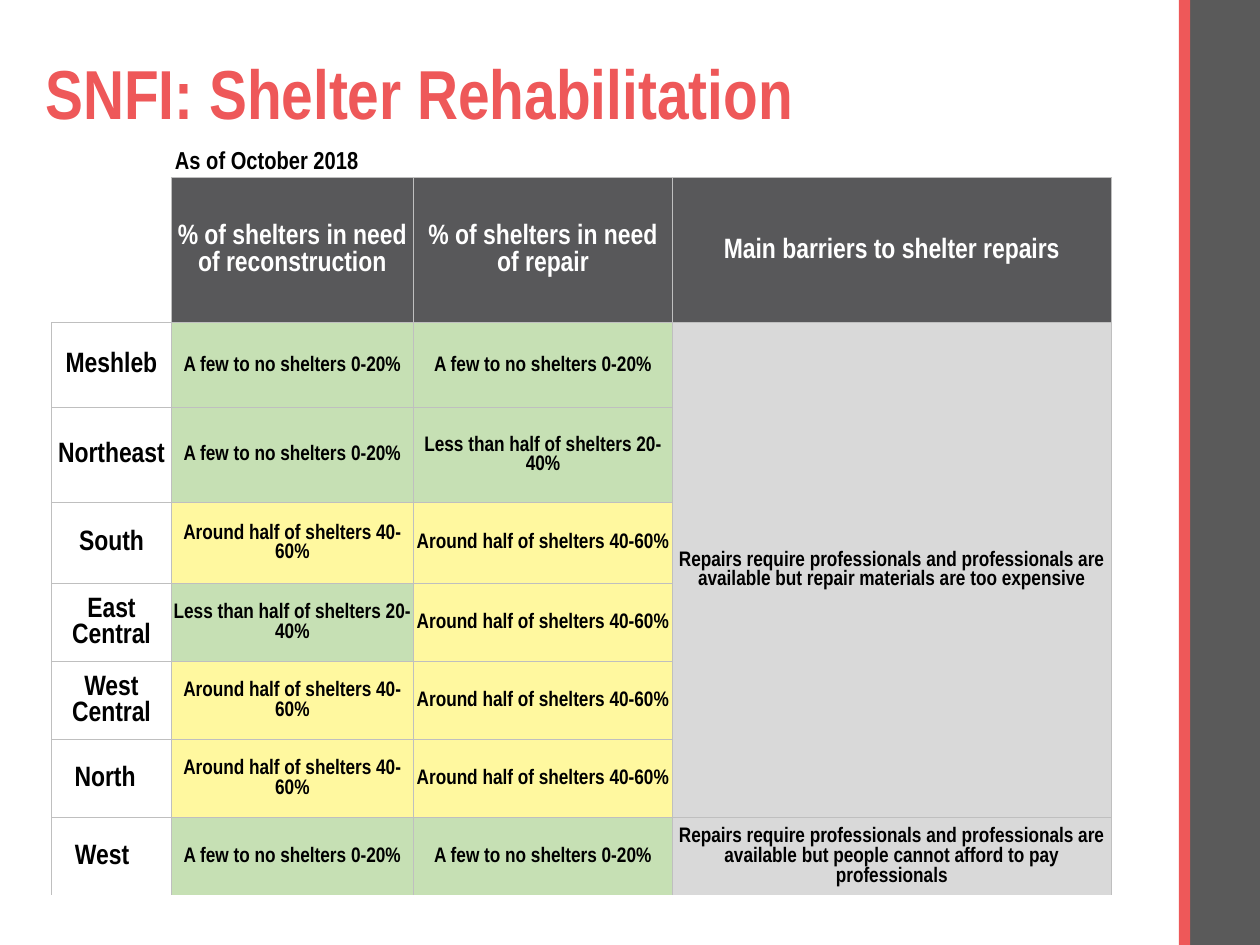
"""Build the shelter rehabilitation slide with its table of needs by area."""
from lxml import etree
from pptx import Presentation
from pptx import util as u
from pptx.dml.color import RGBColor
from pptx.enum import shapes, text
from pptx.oxml import ns

FONT = "Arial Narrow"
COLORS = {
    "accent": "EE5859", "band": "5A5A5A", "header": "58585A", "border": "BFBFBF",
    "low": "C6E0B4", "half": "FFF89F", "barrier": "D9D9D9",
    "black": "000000", "white": "FFFFFF",
}
FEW = ("A few to no shelters 0-20%", "low")
LESS = ("Less than half of shelters 20-40%", "low")
HALF = ("Around half of shelters 40-60%", "half")
HEADERS = ["% of shelters in need of reconstruction",
           "% of shelters in need of repair",
           "Main barriers to shelter repairs"]
AREAS = [
    ("Meshleb", FEW, FEW),
    ("Northeast", FEW, LESS),
    ("South", HALF, HALF),
    ("East Central", LESS, HALF),
    ("West Central", HALF, HALF),
    ("North", HALF, HALF),
    ("West", FEW, FEW),
]
LABEL_INSETS = {"North": 8, "West": 11.5}
BARRIERS = {
    1: "Repairs require professionals and professionals are available "
       "but repair materials are too expensive",
    7: "Repairs require professionals and professionals are available "
       "but people cannot afford to pay professionals",
}
COLUMN_WIDTHS = [68.4, 138.3, 148.2, 250.5]
ROW_HEIGHTS = [82.7, 48.6, 54.2, 46.3] + [44.6] * 4


def color(name):
    return RGBColor.from_string(COLORS[name])


def set_font(paragraph, size, name):
    paragraph.font.name = FONT
    paragraph.font.size = u.Pt(size)
    paragraph.font.bold = True
    paragraph.font.color.rgb = color(name)


def place(shape, left, top, width, height):
    shape.left, shape.top = u.Pt(left), u.Pt(top)
    shape.width, shape.height = u.Pt(width), u.Pt(height)


def add_band(slide, left, width, fill):
    shape = slide.shapes.add_shape(shapes.MSO_SHAPE.RECTANGLE, u.Pt(left), 0, u.Pt(width), u.Pt(540))
    shape.shadow.inherit = False
    shape.fill.solid()
    shape.fill.fore_color.rgb = color(fill)
    shape.line.fill.background()


def set_title(slide, wording):
    title = slide.shapes.title
    place(title, 18.7, 28.8, 625.7, 53.3)
    frame = title.text_frame
    frame.text = wording
    frame.vertical_anchor = text.MSO_ANCHOR.MIDDLE
    frame.auto_size = text.MSO_AUTO_SIZE.NONE
    paragraph = frame.paragraphs[0]
    paragraph.alignment = text.PP_ALIGN.LEFT
    paragraph.line_spacing = 0.9
    set_font(paragraph, 39.6, "accent")


def add_date(slide, wording):
    box = slide.shapes.add_textbox(u.Pt(92.9), u.Pt(79.2), u.Pt(643.7), u.Pt(24.5))
    box.text_frame.word_wrap = True
    box.text_frame.text = wording
    set_font(box.text_frame.paragraphs[0], 14, "black")


def set_borders(cell, sides):
    properties = cell._tc.get_or_add_tcPr()
    for side in "LRTB":
        line = etree.SubElement(properties, ns.qn(f"a:ln{side}"), w=str(u.Pt(0.5)))
        if side in sides:
            fill = etree.SubElement(line, ns.qn("a:solidFill"))
            etree.SubElement(fill, ns.qn("a:srgbClr"), val=COLORS["border"])
        else:
            etree.SubElement(line, ns.qn("a:noFill"))


def fill_cell(cell, wording, size, font_color, fill=None, right_inset=0.7):
    cell.margin_left = cell.margin_top = u.Pt(0.7)
    cell.margin_right, cell.margin_bottom = u.Pt(right_inset), 0
    cell.vertical_anchor = text.MSO_ANCHOR.MIDDLE
    cell.text = wording
    paragraph = cell.text_frame.paragraphs[0]
    paragraph.alignment = text.PP_ALIGN.CENTER
    set_font(paragraph, size, font_color)
    if fill:
        cell.fill.solid()
        cell.fill.fore_color.rgb = color(fill)


def create_table(slide):
    frame = slide.shapes.add_table(len(ROW_HEIGHTS), len(COLUMN_WIDTHS), u.Pt(29.5), u.Pt(101.6),
                                   u.Pt(sum(COLUMN_WIDTHS)), u.Pt(sum(ROW_HEIGHTS)))
    table = frame.table
    table.first_row = table.horz_banding = False
    for column, width in zip(table.columns, COLUMN_WIDTHS):
        column.width = u.Pt(width)
    last = len(ROW_HEIGHTS) - 1
    for index, (row, height) in enumerate(zip(table.rows, ROW_HEIGHTS)):
        row.height = u.Pt(height)
        for position, cell in enumerate(row.cells):
            sides = "RB" if index == position == 0 else "LRT" if index == last else "LRTB"
            set_borders(cell, sides)
            cell.fill.background()
    return table


def add_shelter_table(slide):
    table = create_table(slide)
    for column, header in enumerate(HEADERS, 1):
        fill_cell(table.cell(0, column), header, 16, "white", "header")
    for row, (area, *ratings) in enumerate(AREAS, 1):
        fill_cell(table.cell(row, 0), area, 16, "black", right_inset=LABEL_INSETS.get(area, 0.7))
        for column, (rating, fill) in enumerate(ratings, 1):
            fill_cell(table.cell(row, column), rating, 12, "black", fill)
    table.cell(1, 3).merge(table.cell(6, 3))
    for row, barrier in BARRIERS.items():
        fill_cell(table.cell(row, 3), barrier, 12, "black", "barrier")


def main():
    presentation = Presentation()
    presentation.slide_width, presentation.slide_height = u.Pt(720), u.Pt(540)
    slide = presentation.slides.add_slide(presentation.slide_layouts.get_by_name("Title Only"))
    add_band(slide, 679.5, 40.5, "band")
    add_band(slide, 673.6, 6.5, "accent")
    set_title(slide, "SNFI: Shelter Rehabilitation")
    add_shelter_table(slide)
    add_date(slide, "As of October 2018")
    presentation.save("out.pptx")


if __name__ == "__main__":
    main()
